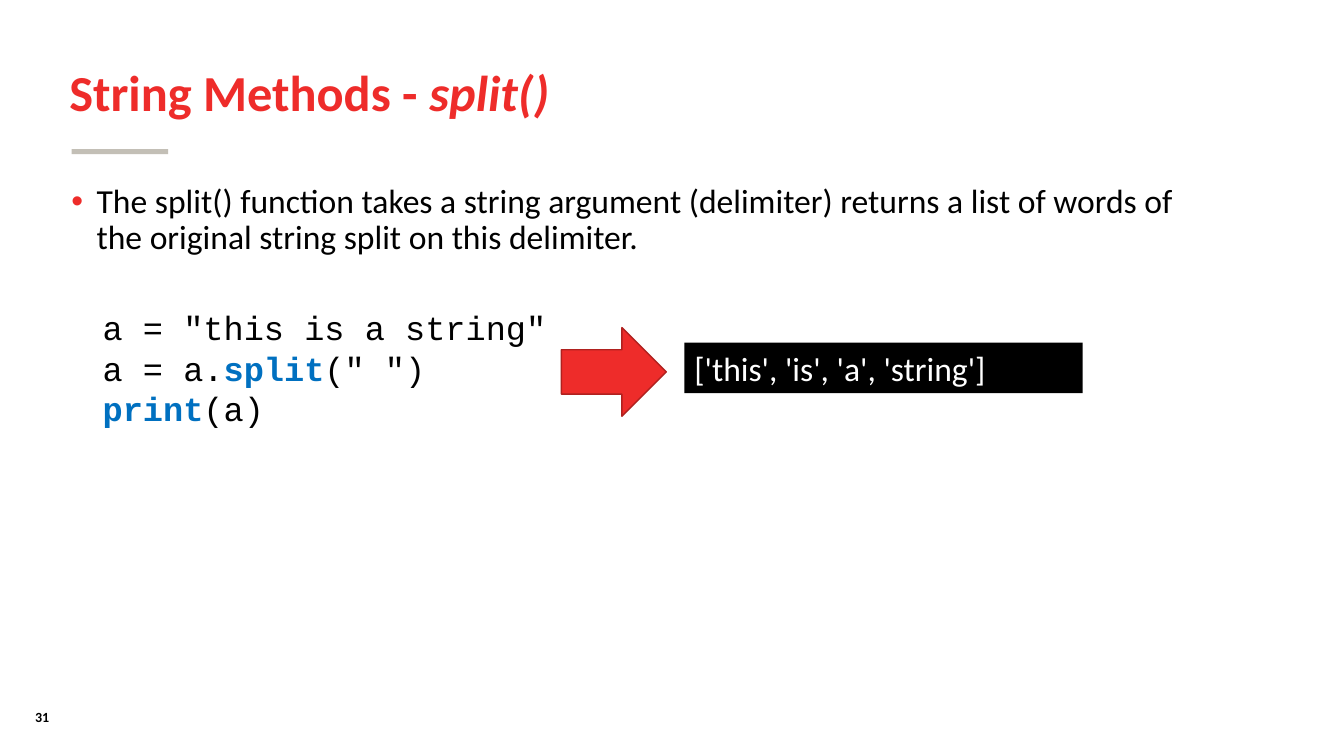
"""Build the slide on the split() string method."""
from lxml import etree
from pptx import Presentation
from pptx.dml.color import RGBColor
from pptx.enum import shapes, text
from pptx.oxml import ns
from pptx.util import Pt

HUES = {"red": "EE2C2A", "edge": "B0211F", "gray": "C3BFB6",
        "blue": "0070C0", "black": "000000", "white": "FFFFFF"}
SANS, MONO = "Calibri", "Courier New"

TITLE = [[("String Methods - ", "red", "b"), ("split()", "red", "bi")]]
BODY = [[("The split() function takes a string argument (delimiter) returns a list "
          "of words of the original string split on this delimiter.", "black", "")]]
CODE = [
    [('a = "this is a string"', "black", "")],
    [("a = a.", "black", ""), ("split", "blue", "b"), ('(" ")', "black", "")],
    [("print", "blue", "b"), ("(a)", "black", "")],
]
RESULT = [[("['this', 'is', 'a', 'string']", "white", "")]]
PAGE = [[("31", "black", "b")]]

TEXTS = [
    (PAGE, (18, 502.56, 82.08, 19.44), SANS, 10, 1, "TOP"),
    (TITLE, (42.48, 28.8, 809.28, 77.76), SANS, 36, 0.9, "MIDDLE"),
    (BODY, (43.92, 128.16, 807.84, 342.72), SANS, 24, 0.9, "TOP"),
    (CODE, (66.24, 216, 350.64, 94.32), MONO, 24, 1, "TOP"),
]
BAR = (51.12, 106.56, 69.12, 3.6)
ARROW = (401.04, 234, 74.88, 63.36)
PANEL = (488.88, 244.8, 284.4, 36)


def hue(name):
    return RGBColor.from_string(HUES[name])


def write(shape, paras, font, size, lead=1, side="TOP"):
    frame = shape.text_frame
    frame.word_wrap = True
    frame.vertical_anchor = text.MSO_ANCHOR[side]
    for i, parts in enumerate(paras):
        para = frame.add_paragraph() if i else frame.paragraphs[0]
        para.alignment = text.PP_ALIGN.LEFT
        para.line_spacing = lead
        for words, tint, style in parts:
            run = para.add_run()
            run.text = words
            run.font.name, run.font.size = font, Pt(size)
            run.font.bold, run.font.italic = "b" in style, "i" in style
            run.font.color.rgb = hue(tint)


def draw(kind, box, fill, edge=None):
    shape = slide.shapes.add_shape(shapes.MSO_SHAPE[kind], *map(Pt, box))
    shape.shadow.inherit = False
    shape.fill.solid()
    shape.fill.fore_color.rgb = hue(fill)
    if edge:
        shape.line.color.rgb, shape.line.width = hue(edge), Pt(1)
    else:
        shape.line.fill.background()
    return shape


def bullet(para):
    props = para._p.get_or_add_pPr()
    props.set("marL", str(Pt(18)))
    props.set("indent", str(Pt(-18)))
    tint = etree.SubElement(props, ns.qn("a:buClr"))
    etree.SubElement(tint, ns.qn("a:srgbClr"), val=HUES["red"])
    etree.SubElement(props, ns.qn("a:buFont"), typeface="Arial")
    etree.SubElement(props, ns.qn("a:buChar"), char="•")


deck = Presentation()
deck.slide_width, deck.slide_height = Pt(960), Pt(540)
slide = deck.slides.add_slide(deck.slide_layouts[6])

draw("RECTANGLE", BAR, "gray")
for paras, box, *look in TEXTS:
    label = slide.shapes.add_textbox(*map(Pt, box))
    write(label, paras, *look)
    if paras is BODY:
        bullet(label.text_frame.paragraphs[0])
draw("RIGHT_ARROW", ARROW, "red", "edge")
write(draw("RECTANGLE", PANEL, "black"), RESULT, SANS, 24)

deck.save("out.pptx")
